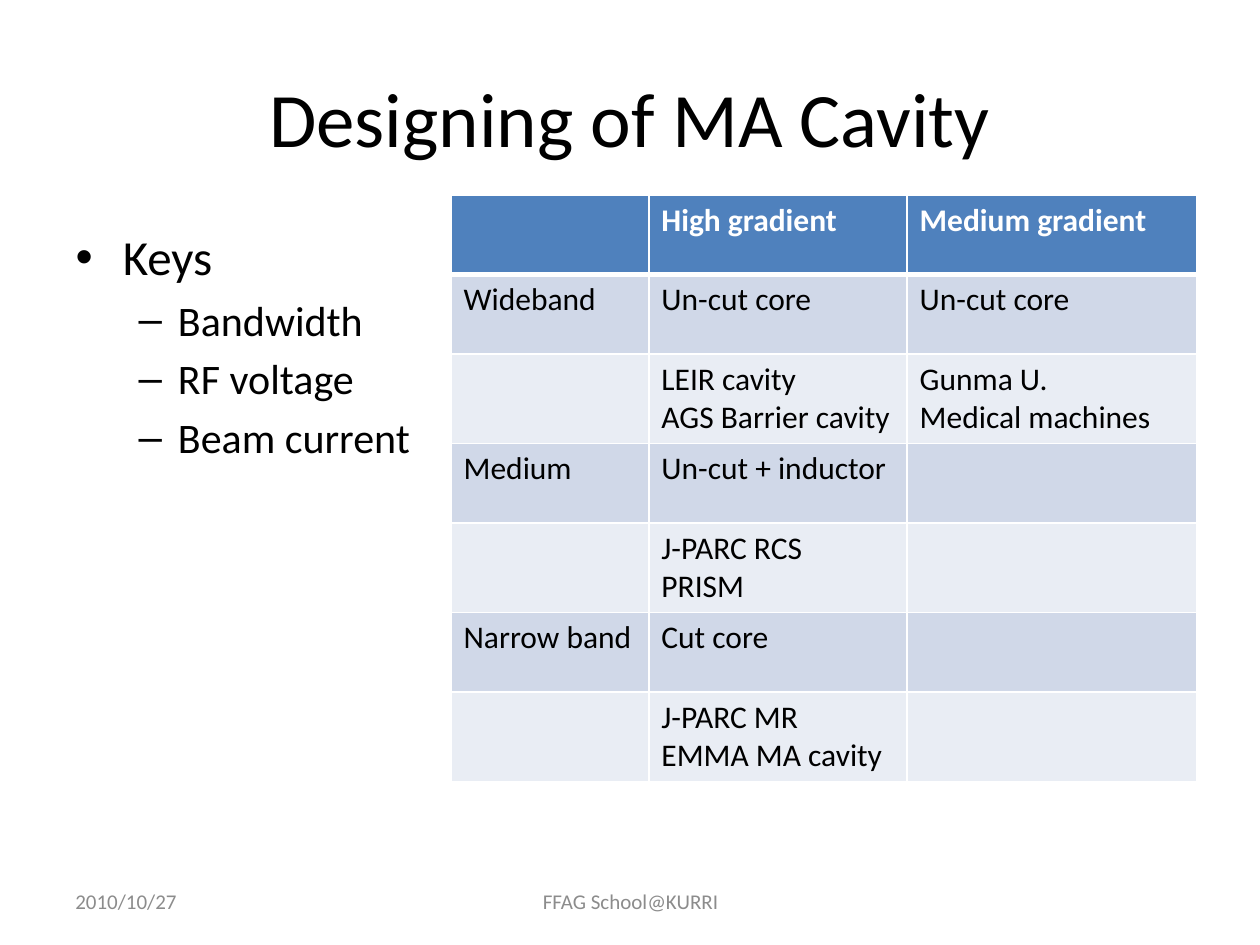
from lxml.etree import SubElement
from pptx import Presentation
from pptx.dml.color import RGBColor
from pptx.enum.text import MSO_ANCHOR as Anchor, PP_ALIGN as Align
from pptx.oxml.ns import qn
from pptx.util import Inches, Pt

FONT = "Calibri"
BLACK = RGBColor(0x00, 0x00, 0x00)
WHITE = RGBColor(0xFF, 0xFF, 0xFF)
GREY = RGBColor(0x8C, 0x8C, 0x8C)
HEADER_BLUE = RGBColor(0x4F, 0x81, 0xBD)
BANDS = (RGBColor(0xD0, 0xD8, 0xE8), RGBColor(0xE9, 0xED, 0xF4))

# Content
TITLE = "Designing of MA Cavity"
KEYS = [("Keys", 0), ("Bandwidth", 1), ("RF voltage", 1), ("Beam current", 1)]
KEY_SIZES = (28, 24)
CAVITIES = [
    ("", "High gradient", "Medium gradient"),
    ("Wideband", "Un-cut core", "Un-cut core"),
    ("", "LEIR cavity\nAGS Barrier cavity", "Gunma U.\nMedical machines"),
    ("Medium", "Un-cut + inductor", ""),
    ("", "J-PARC RCS\nPRISM", ""),
    ("Narrow band", "Cut core", ""),
    ("", "J-PARC MR\nEMMA MA cavity", ""),
]
FOOTERS = [
    ("2010/10/27", 0.5, 2.33, Align.LEFT),
    ("FFAG School@KURRI", 3.42, 3.17, Align.CENTER),
]

# Layout in inches
SLIDE_W, SLIDE_H, MARGIN = 10, 7.5, 0.5
COLUMNS = (1.57, 2.05, 2.3)
ROW_H = 0.63
TABLE_W = sum(COLUMNS)


def place(shape, left, top, width, height):
    shape.left, shape.top = Inches(left), Inches(top)
    shape.width, shape.height = Inches(width), Inches(height)


def add_run(paragraph, text, size, color, bold=False):
    run = paragraph.add_run()
    run.text = text
    run.font.name, run.font.size, run.font.bold = FONT, Pt(size), bold
    run.font.color.rgb = color


def add_border(cell, side, points):
    line = SubElement(cell._tc.get_or_add_tcPr(), qn(f"a:ln{side}"), w=str(Pt(points)))
    fill = SubElement(line, qn("a:solidFill"))
    SubElement(fill, qn("a:srgbClr"), val=str(WHITE))


def fill_cell(cell, text, row):
    header = row == 0
    for side in "LRTB":
        heavy = (row, side) in ((0, "B"), (1, "T"))
        add_border(cell, side, 3 if heavy else 1)
    cell.fill.solid()
    cell.fill.fore_color.rgb = HEADER_BLUE if header else BANDS[(row - 1) % 2]
    frame = cell.text_frame
    for i, line in enumerate(text.split("\n") if text else []):
        paragraph = frame.add_paragraph() if i else frame.paragraphs[0]
        add_run(paragraph, line, 18, WHITE if header else BLACK, header)


prs = Presentation()
prs.slide_width, prs.slide_height = Inches(SLIDE_W), Inches(SLIDE_H)
slide = prs.slides.add_slide(prs.slide_layouts[1])

# Title
title = slide.shapes.title
place(title, MARGIN, 0.3, SLIDE_W - 2 * MARGIN, 1.25)
title.text_frame.vertical_anchor = Anchor.MIDDLE
heading = title.text_frame.paragraphs[0]
heading.alignment = Align.CENTER
add_run(heading, TITLE, 44, BLACK)

# Key points, with the template's bullets
keys = slide.placeholders[1]
place(keys, MARGIN, 1.75, 3, 4.95)
for i, (point, level) in enumerate(KEYS):
    paragraph = keys.text_frame.add_paragraph() if i else keys.text_frame.paragraphs[0]
    paragraph.level = level
    if i == 0:
        paragraph.space_before = Pt(0)
    add_run(paragraph, point, KEY_SIZES[level], BLACK)

# Cavity table, flush with the right margin
table = slide.shapes.add_table(
    len(CAVITIES), len(COLUMNS),
    Inches(SLIDE_W - MARGIN - TABLE_W), Inches(1.55),
    Inches(TABLE_W), Inches(ROW_H * len(CAVITIES)),
).table
for column, width in zip(table.columns, COLUMNS):
    column.width = Inches(width)
for r, entries in enumerate(CAVITIES):
    table.rows[r].height = Inches(ROW_H)
    for c, entry in enumerate(entries):
        fill_cell(table.cell(r, c), entry, r)

# Date and footer
for text, left, width, alignment in FOOTERS:
    footer = slide.shapes.add_textbox(
        Inches(left), Inches(6.95), Inches(width), Inches(0.4))
    frame = footer.text_frame
    frame.word_wrap = True
    frame.vertical_anchor = Anchor.MIDDLE
    frame.paragraphs[0].alignment = alignment
    add_run(frame.paragraphs[0], text, 12, GREY)

prs.save("out.pptx")
